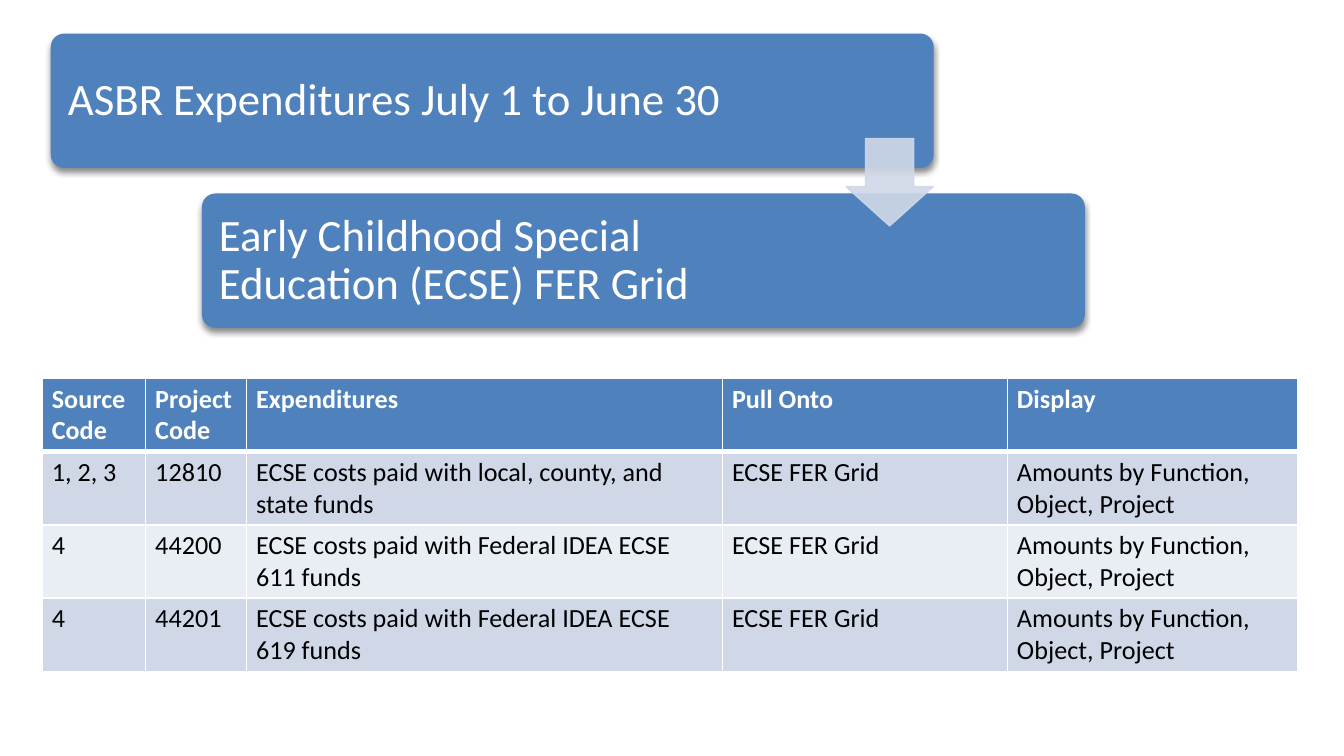
import pptx
import pptx.dml.color
import pptx.enum.shapes
import pptx.enum.text
import pptx.oxml
import pptx.oxml.ns
import pptx.util

Pt = pptx.util.Pt
NAMESPACE = pptx.oxml.ns.nsdecls("a")
BLUE, PALE_BLUE, PALEST_BLUE = "4F81BD", "D0D8E8", "E9EDF4"
WHITE, BLACK = "FFFFFF", "000000"


def color(hex_string):
    return pptx.dml.color.RGBColor.from_string(hex_string)


def format_text(paragraph, size, hex_string, bold=False):
    paragraph.font.name = "Calibri"
    paragraph.font.size = Pt(size)
    paragraph.font.bold = bold
    paragraph.font.color.rgb = color(hex_string)


presentation = pptx.Presentation()
presentation.slide_width = Pt(720)
presentation.slide_height = Pt(405)
slide = presentation.slides.add_slide(presentation.slide_layouts[5])  # Title Only
shapes = slide.shapes
title = shapes.title

# Expenditure table
column_widths = [55.4, 54, 255, 152.7, 155.4]
rows = [
    ["Source Code", "Project Code", "Expenditures", "Pull Onto", "Display"],
    ["1, 2, 3", "12810", "ECSE costs paid with local, county, and state funds",
     "ECSE FER Grid", "Amounts by Function, Object, Project"],
    ["4", "44200", "ECSE costs paid with Federal IDEA ECSE 611 funds",
     "ECSE FER Grid", "Amounts by Function, Object, Project"],
    ["4", "44201", "ECSE costs paid with Federal IDEA ECSE 619 funds",
     "ECSE FER Grid", "Amounts by Function, Object, Project"],
]
row_height = 38.4
table = shapes.add_table(
    len(rows), len(column_widths), Pt(22.6), Pt(202.7),
    Pt(sum(column_widths)), Pt(row_height * len(rows))).table
for column, width in zip(table.columns, column_widths):
    column.width = Pt(width)

for row_index, texts in enumerate(rows):
    table.rows[row_index].height = Pt(row_height)
    is_header = row_index == 0
    fill = BLUE if is_header else PALE_BLUE if row_index % 2 else PALEST_BLUE
    for column_index, text in enumerate(texts):
        cell = table.cell(row_index, column_index)
        cell.text = text
        cell.margin_left = cell.margin_right = Pt(5.2)
        cell.margin_top = cell.margin_bottom = Pt(2.6)
        format_text(cell.text_frame.paragraphs[0], 14, WHITE if is_header else BLACK, is_header)
        # White borders, heavier between the header and the body
        for side in "LRTB":
            heavy = (row_index, side) in [(0, "B"), (1, "T")]
            cell._tc.get_or_add_tcPr().append(pptx.oxml.parse_xml(
                f'<a:ln{side} {NAMESPACE} w="{Pt(3 if heavy else 1)}">'
                f'<a:solidFill><a:srgbClr val="{WHITE}"/></a:solidFill></a:ln{side}>'))
        cell.fill.solid()
        cell.fill.fore_color.rgb = color(fill)

# Two stepped banners, each with its label on top
banner_width, banner_height = 473, 72
labels = [
    (title, "ASBR Expenditures July 1 to June 30", 27.2, 18, 399),
    (shapes.add_textbox(0, 0, 0, 0), "Early Childhood Special Education (ECSE) FER Grid",
     108.2, 103.7, 338.5),
]
for label, text, left, top, label_width in labels:
    banner = shapes.add_shape(
        pptx.enum.shapes.MSO_SHAPE.ROUNDED_RECTANGLE,
        Pt(left), Pt(top), Pt(banner_width), Pt(banner_height))
    banner.adjustments[0] = 0.1
    banner.fill.solid()
    banner.fill.fore_color.rgb = color(BLUE)
    banner.line.fill.background()
    banner.shadow.inherit = False
    banner._element.spPr.find(pptx.oxml.ns.qn("a:effectLst")).append(pptx.oxml.parse_xml(
        f'<a:outerShdw {NAMESPACE} blurRad="{Pt(3)}" dist="{Pt(2.4)}" dir="5400000" '
        f'rotWithShape="0"><a:srgbClr val="{BLACK}"><a:alpha val="45000"/></a:srgbClr>'
        '</a:outerShdw>'))

    label.left, label.top = Pt(left + 2), Pt(top + 2)
    label.width, label.height = Pt(label_width), Pt(banner_height - 4)
    frame = label.text_frame
    frame.text = text
    frame.word_wrap = True
    frame.auto_size = pptx.enum.text.MSO_AUTO_SIZE.NONE
    frame.vertical_anchor = pptx.enum.text.MSO_ANCHOR.MIDDLE
    frame.margin_left = frame.margin_right = Pt(7.2)
    frame.margin_top = frame.margin_bottom = Pt(7.2)
    paragraph = frame.paragraphs[0]
    paragraph.alignment = pptx.enum.text.PP_ALIGN.LEFT
    paragraph.line_spacing = 0.9
    format_text(paragraph, 24, WHITE)
    shapes._spTree.append(label._element)  # bring in front of its banner

# Translucent arrow from the first banner to the second
arrow = shapes.add_shape(
    pptx.enum.shapes.MSO_SHAPE.DOWN_ARROW, Pt(453.2), Pt(74.2), Pt(46.8), Pt(46.8))
arrow.adjustments[0] = 0.55
arrow.adjustments[1] = 0.45
arrow.shadow.inherit = False
arrow.line.width = Pt(0.79)
for fill in (arrow.fill, arrow.line.fill):
    fill.solid()
    fill.fore_color.rgb = color(PALE_BLUE)
for color_element in arrow._element.spPr.iter(pptx.oxml.ns.qn("a:srgbClr")):
    color_element.append(pptx.oxml.parse_xml(f'<a:alpha {NAMESPACE} val="90000"/>'))

presentation.save("out.pptx")
